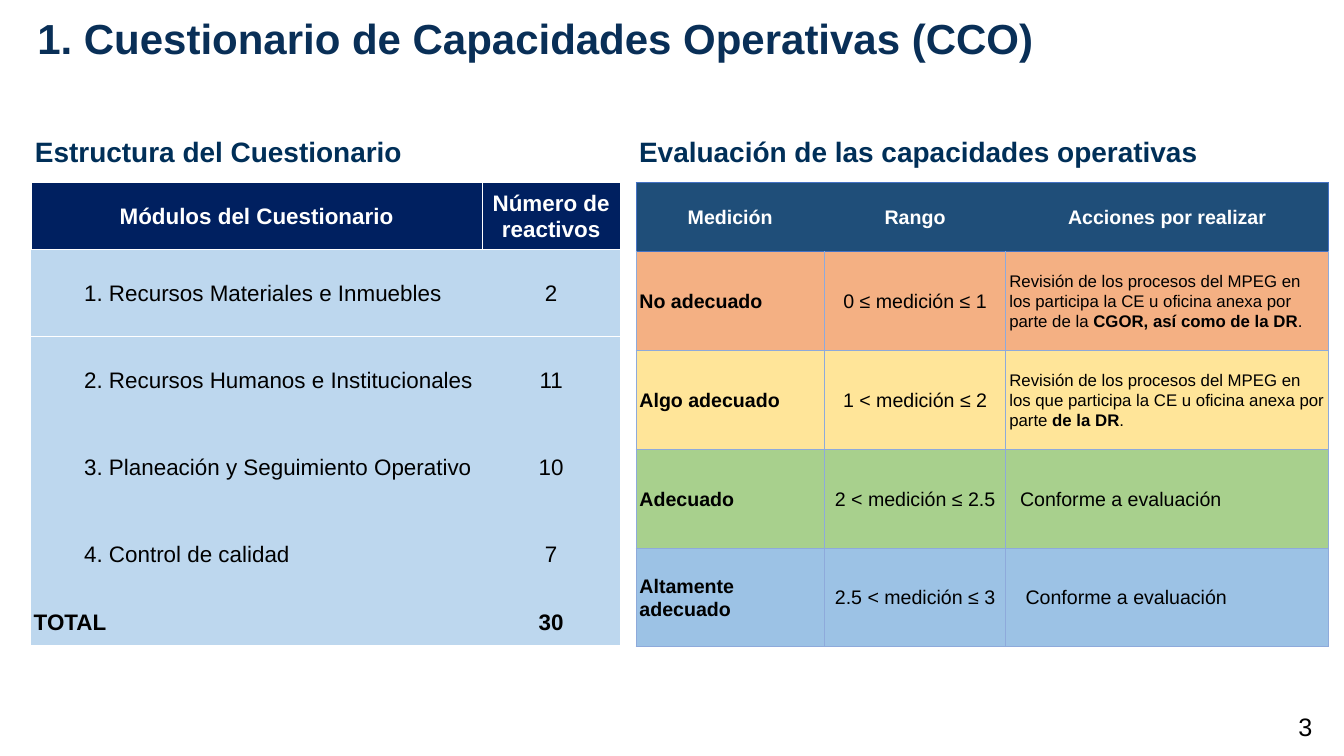
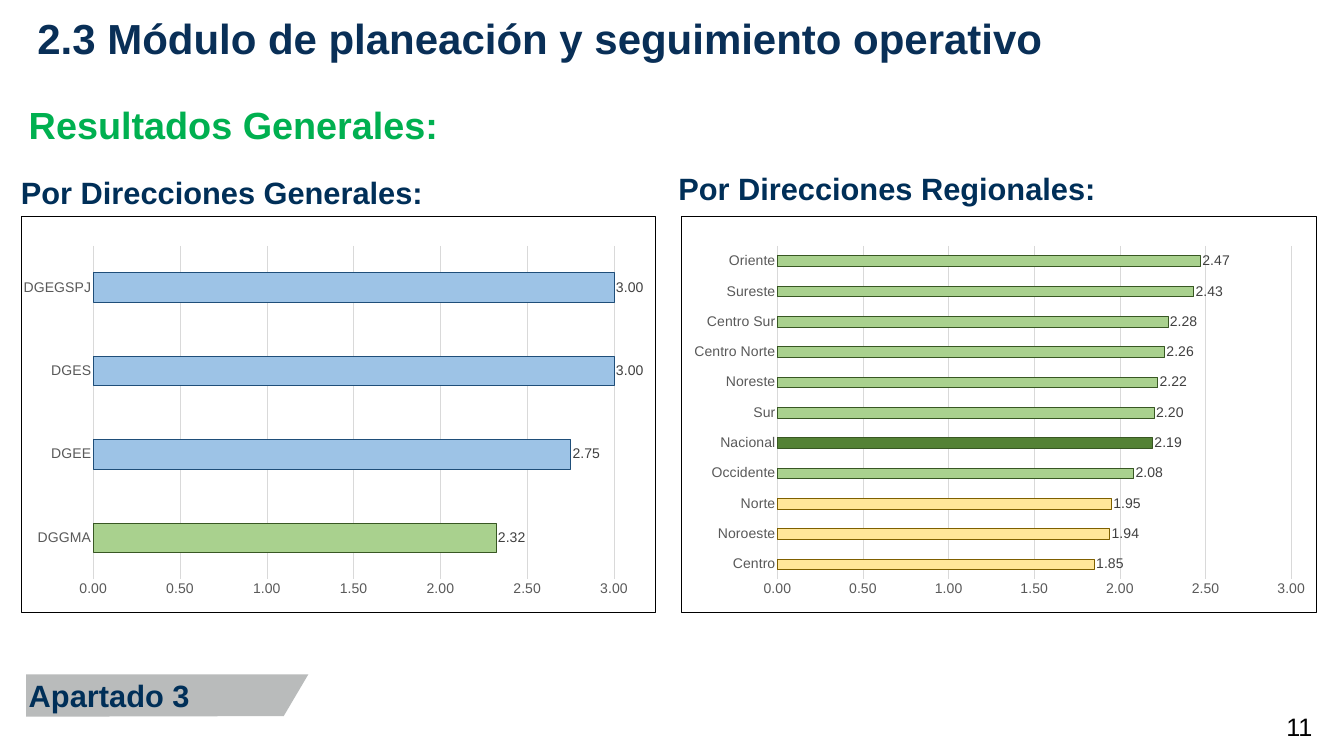
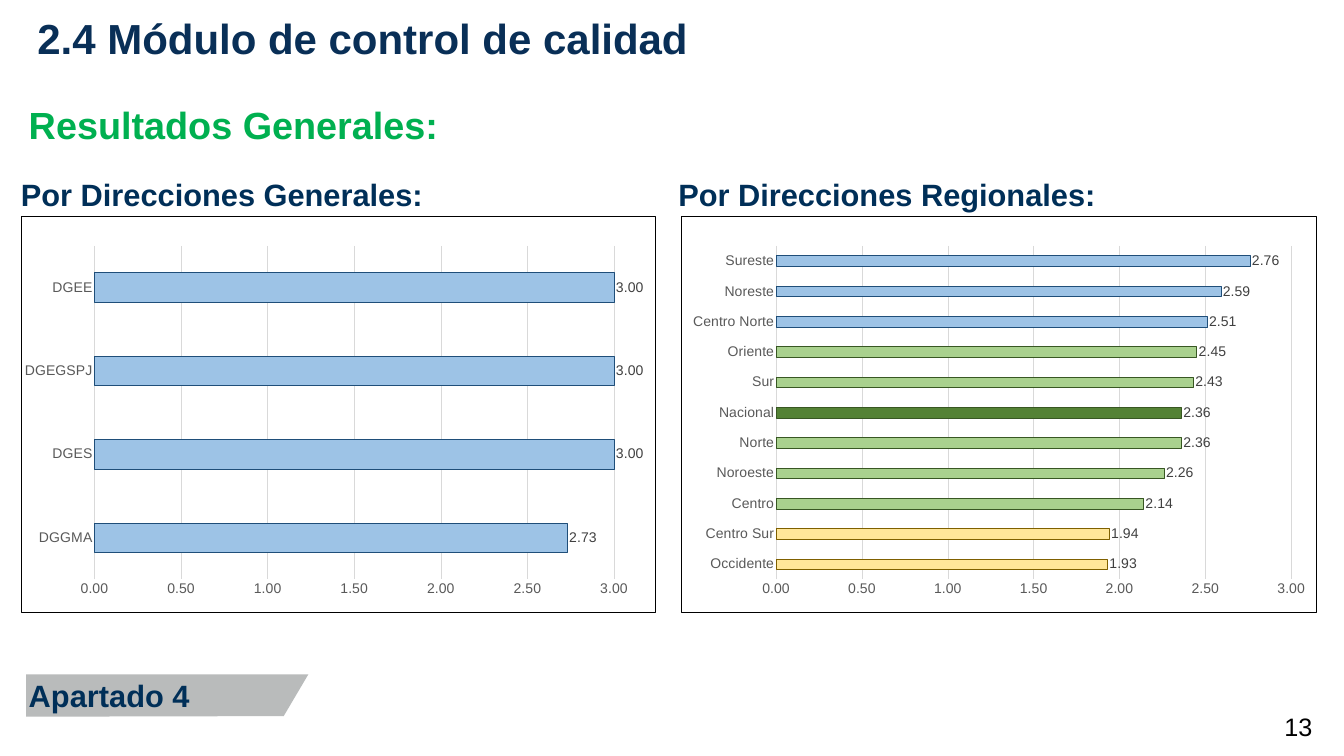
from dataclasses import dataclass

from pptx import Presentation
from pptx.chart.data import CategoryChartData
from pptx.dml.color import RGBColor
from pptx.enum.chart import XL_CHART_TYPE as ChartType, XL_LABEL_POSITION as LabelPos, XL_TICK_MARK as Tick
from pptx.enum.text import MSO_ANCHOR as Anchor, PP_ALIGN as Align
from pptx.oxml import parse_xml
from pptx.oxml.ns import nsdecls, qn
from pptx.util import Cm, Pt


@dataclass(frozen=True)
class Theme:
    font: str = "Arial"
    title: str = "092F57"
    heading: str = "002F58"
    accent: str = "00B050"
    black: str = "000000"
    white: str = "FFFFFF"
    tag: str = "B9BBBB"
    modules_head: str = "002060"
    modules_body: str = "BDD7EE"
    ranges_head: str = "1F4E79"
    ranges_edge: str = "4472C4"
    ranges_grid: str = "8EAADB"
    ranges_rows: tuple = ("F4B083", "FFE599", "A8D08D", "9CC2E5")
    axis_text: str = "595959"
    label_text: str = "404040"
    grid: str = "D9D9D9"
    low: tuple = ("FFE699", "7F6000")
    good: tuple = ("A9D18E", "385723")
    high: tuple = ("9DC3E6", "1F4E79")
    national: tuple = ("548235", "385723")
    title_size: int = 60
    subtitle_size: int = 54
    chart_heading_size: int = 44
    table_heading_size: int = 40
    number_size: int = 36
    modules_size: int = 32
    ranges_size: int = 28
    action_size: int = 24
    chart_size: int = 20


T = Theme()
INSET = 0.13

MODULES = [
    ("1. Recursos Materiales e Inmuebles", "2"),
    ("2. Recursos Humanos e Institucionales", "11"),
    ("3. Planeación y Seguimiento Operativo", "10"),
    ("4. Control de calidad", "7"),
    ("TOTAL", "30"),
]
RANGES = [
    ("No adecuado", "0 ≤ medición ≤ 1",
     [("Revisión de los procesos del MPEG en los participa la CE u oficina anexa por parte de la ", False),
      ("CGOR, así como de la DR", True), (".", False)], T.action_size, 0),
    ("Algo adecuado", "1 < medición ≤ 2",
     [("Revisión de los procesos del MPEG en los que participa la CE u oficina anexa por parte ", False),
      ("de la DR", True), (".", False)], T.action_size, 0),
    ("Adecuado", "2 < medición ≤ 2.5", [("Conforme a evaluación", False)], T.ranges_size, 0.54),
    ("Altamente adecuado", "2.5 < medición ≤ 3", [("Conforme a evaluación", False)], T.ranges_size, 0.82),
]
RESULTS = [
    dict(
        title="2.3 Módulo de planeación y seguimiento operativo", tag="Apartado 3", number="11",
        general=dict(DGGMA=2.32, DGEE=2.75, DGES=3, DGEGSPJ=3),
        regional={"Centro": 1.85, "Noroeste": 1.94, "Norte": 1.95, "Occidente": 2.08, "Nacional": 2.19,
                  "Sur": 2.2, "Noreste": 2.22, "Centro Norte": 2.26, "Centro Sur": 2.28,
                  "Sureste": 2.43, "Oriente": 2.47},
        heading_tops=(8.64, 8.43), plots=((0.114, 0.821), (0.151, 0.81)),
    ),
    dict(
        title="2.4 Módulo de control de calidad", tag="Apartado 4", number="13",
        general=dict(DGGMA=2.73, DGES=3, DGEGSPJ=3, DGEE=3),
        regional={"Occidente": 1.93, "Centro Sur": 1.94, "Centro": 2.14, "Noroeste": 2.26, "Norte": 2.36,
                  "Nacional": 2.36, "Sur": 2.43, "Oriente": 2.45, "Centro Norte": 2.51,
                  "Noreste": 2.59, "Sureste": 2.76},
        heading_tops=(8.71, 8.71), plots=((0.116, 0.819), (0.149, 0.812)),
    ),
]


def rgb(color):
    return RGBColor.from_string(color)


def assign(target, **values):
    for name, value in values.items():
        setattr(target, name, value)


def style_font(font, size, color, bold=False):
    assign(font, name=T.font, size=Pt(size), bold=bold)
    font.color.rgb = rgb(color)


def write(tf, runs, size, color, align=Align.LEFT, **paragraph):
    p = tf.paragraphs[0]
    assign(p, alignment=align, **paragraph)
    for text, bold in runs:
        r = p.add_run()
        r.text = text
        style_font(r.font, size, color, bold)
    return p


def set_insets(target, x, y):
    assign(target, margin_left=Cm(x), margin_right=Cm(x), margin_top=Cm(y), margin_bottom=Cm(y))


def add_text(slide, box, text, size, color, align=Align.LEFT, bold=True, anchor=Anchor.TOP):
    tf = slide.shapes.add_textbox(*map(Cm, box)).text_frame
    assign(tf, word_wrap=True, vertical_anchor=anchor)
    set_insets(tf, INSET, INSET)
    write(tf, [(text, bold)], size, color, align)


def add_slide(prs, title, number):
    slide = prs.slides.add_slide(prs.slide_layouts[5])
    sp = slide.shapes.title
    assign(sp, left=Cm(1.63), top=Cm(0.79), width=Cm(64.08), height=Cm(2.62))
    assign(sp.text_frame, word_wrap=True, vertical_anchor=Anchor.TOP)
    set_insets(sp.text_frame, 0.25, INSET)
    write(sp.text_frame, [(title, True)], T.title_size, T.title, line_spacing=0.9)
    add_text(slide, (62.03, 35.59, 4.25, 2.06), number, T.number_size, T.black,
             Align.RIGHT, False, Anchor.MIDDLE)
    return slide


def add_plain_table(slide, left, top, widths, heights):
    frame = slide.shapes.add_table(len(heights), len(widths), Cm(left), Cm(top),
                                   Cm(sum(widths)), Cm(sum(heights)))
    table = frame.table
    assign(table, first_row=False, horz_banding=False)
    table._tbl.tblPr[0].text = "{2D5ABB26-0587-4C30-8999-92F81FD0307C}"
    for column, width in zip(table.columns, widths):
        column.width = Cm(width)
    for row, height in zip(table.rows, heights):
        row.height = Cm(height)
    return table


def fill_cell(cell, runs, size, color, fill, align, inset, borders, indent=0, **paragraph):
    cell.vertical_anchor = Anchor.MIDDLE
    set_insets(cell, inset, 0)
    p = write(cell.text_frame, runs, size, color, align, line_spacing=1.07, **paragraph)
    if indent:
        p._p.get_or_add_pPr().set("marL", str(Cm(indent)))
    for side in "LRTB":
        if side in borders:
            cell._tc.get_or_add_tcPr().append(parse_xml(
                f'<a:ln{side} {nsdecls("a")} w="12700"><a:solidFill>'
                f'<a:srgbClr val="{borders[side]}"/></a:solidFill></a:ln{side}>'))
    cell.fill.solid()
    cell.fill.fore_color.rgb = rgb(fill)


def add_modules_table(slide):
    table = add_plain_table(slide, 1.57, 9.19, (22.73, 6.96), [3.38] + [4.39] * 4 + [2.39])
    for i, text in enumerate(("Módulos del Cuestionario", "Número de reactivos")):
        fill_cell(table.cell(0, i), [(text, True)], T.modules_size, T.white, T.modules_head,
                  Align.CENTER, INSET, dict.fromkeys("LRTB" if i == 0 else "LTB", T.white))
    for i, row in enumerate(MODULES, 1):
        total = i == len(MODULES)
        borders = {"T": T.white} if i == 1 else {}
        for j, text in enumerate(row):
            fill_cell(table.cell(i, j), [(text, total)], T.modules_size, T.black, T.modules_body,
                      Align.CENTER if j else Align.LEFT, INSET, borders,
                      indent=0 if j or total else 2.54)


def add_ranges_table(slide):
    table = add_plain_table(slide, 32.05, 9.19, (9.5, 9.14, 16.26), [3.48] + [4.98] * 4)
    heads = zip(("Medición", "Rango", "Acciones por realizar"), ("LTB", "TB", "RTB"))
    for i, (text, sides) in enumerate(heads):
        fill_cell(table.cell(0, i), [(text, True)], T.ranges_size, T.white, T.ranges_head,
                  Align.CENTER, 0.18, dict.fromkeys(sides, T.ranges_edge), space_after=Pt(8))
    for i, (level, limits, action, action_size, indent) in enumerate(RANGES, 1):
        borders = dict.fromkeys("LRTB", T.ranges_grid)
        if i == 1:
            borders["T"] = T.ranges_edge
        cells = [
            ([(level, True)], T.ranges_size, Align.LEFT, 0),
            ([(limits, False)], T.ranges_size, Align.CENTER, 0),
            (action, action_size, Align.LEFT, indent),
        ]
        for j, (runs, size, align, margin) in enumerate(cells):
            fill_cell(table.cell(i, j), runs, size, T.black, T.ranges_rows[i - 1], align,
                      0.18, borders, margin, space_after=Pt(8))


def rating_colors(name, value):
    if name == "Nacional":
        return T.national
    if value > 2.5:
        return T.high
    return T.good if value > 2 else T.low


def paint(fmt, fill, line):
    fmt.fill.solid()
    fmt.fill.fore_color.rgb = rgb(fill)
    fmt.line.color.rgb = rgb(line)
    fmt.line.width = Pt(0.75)


def frame_chart(chart, x, width):
    space = chart._chartSpace.find(qn("c:chart"))
    space.addnext(parse_xml(
        f'<c:spPr {nsdecls("c", "a")}><a:solidFill><a:srgbClr val="{T.white}"/></a:solidFill>'
        f'<a:ln w="9525"><a:solidFill><a:srgbClr val="{T.black}"/></a:solidFill></a:ln></c:spPr>'))
    area = space.find(qn("c:plotArea"))
    for layout in area.findall(qn("c:layout")):
        area.remove(layout)
    places = "".join(f'<c:{tag} val="{value}"/>' for tag, value in
                     (("x", x), ("y", 0.074), ("w", width), ("h", 0.842)))
    area.insert(0, parse_xml(
        f'<c:layout {nsdecls("c")}><c:manualLayout><c:layoutTarget val="inner"/>'
        f'<c:xMode val="edge"/><c:yMode val="edge"/>{places}</c:manualLayout></c:layout>'))


def add_scores_chart(slide, left, scores, base, plot):
    data = CategoryChartData(number_format="0.00")
    data.categories = list(scores)
    data.add_series("Series 1", list(scores.values()))
    chart = slide.shapes.add_chart(ChartType.BAR_CLUSTERED, Cm(left), Cm(10.9),
                                   Cm(32), Cm(19.99), data).chart
    assign(chart, has_title=False, has_legend=False)
    style_font(chart.font, T.chart_size, T.black)
    frame_chart(chart, *plot)

    for axis in (chart.category_axis, chart.value_axis):
        assign(axis, major_tick_mark=Tick.NONE, minor_tick_mark=Tick.NONE)
        style_font(axis.tick_labels.font, T.chart_size, T.axis_text)
    values = chart.value_axis
    assign(values, minimum_scale=0, maximum_scale=3, major_unit=0.5, has_major_gridlines=True)
    assign(values.tick_labels, number_format="0.00", number_format_is_linked=False)
    values.format.line.fill.background()
    chart.category_axis.has_major_gridlines = False
    for line in (values.major_gridlines.format.line, chart.category_axis.format.line):
        line.color.rgb = rgb(T.grid)
        line.width = Pt(0.75)

    bars = chart.plots[0]
    assign(bars, gap_width=182, vary_by_categories=False, has_data_labels=True)
    labels = bars.data_labels
    assign(labels, show_value=True, number_format="0.00", number_format_is_linked=False,
           position=LabelPos.OUTSIDE_END)
    style_font(labels.font, T.chart_size, T.label_text)
    series = bars.series[0]
    paint(series.format, *base)
    for i, (name, value) in enumerate(scores.items()):
        paint(series.points[i].format, *rating_colors(name, value))


def add_section_tag(slide, text):
    corners = [(15.54, 33.99), (14.3, 36.09), (1.32, 36.12)]
    builder = slide.shapes.build_freeform(Cm(1.32), Cm(33.99))
    builder.add_line_segments([(Cm(x), Cm(y)) for x, y in corners], close=True)
    sp = builder.convert_to_shape()
    sp.shadow.inherit = False
    sp.fill.solid()
    sp.fill.fore_color.rgb = rgb(T.tag)
    sp.line.fill.background()
    assign(sp.text_frame, word_wrap=True, vertical_anchor=Anchor.MIDDLE)
    set_insets(sp.text_frame, INSET, INSET)
    write(sp.text_frame, [(text, True)], T.chart_heading_size, T.heading)


def add_questionnaire_slide(prs):
    slide = add_slide(prs, "1. Cuestionario de Capacidades Operativas (CCO)", "3")
    add_modules_table(slide)
    add_ranges_table(slide)
    for left, width, text in ((1.63, 21.84, "Estructura del Cuestionario"),
                              (32.08, 34.32, "Evaluación de las capacidades operativas")):
        add_text(slide, (left, 6.65, width, 2.9), text, T.table_heading_size, T.heading)


def add_results_slide(prs, result):
    slide = add_slide(prs, result["title"], result["number"])
    add_text(slide, (1.32, 4.98, 21.84, 2.9), "Resultados Generales:", T.subtitle_size, T.accent)
    columns = zip(
        ("Por Direcciones Generales:", "Por Direcciones Regionales:"),
        (0.28, 33.8), result["heading_tops"], (1.04, 34.34),
        (result["general"], result["regional"]), (T.high, T.good), result["plots"])
    for heading, heading_left, heading_top, chart_left, scores, base, plot in columns:
        add_text(slide, (heading_left, heading_top, 21.84, 2.9), heading,
                 T.chart_heading_size, T.heading, Align.CENTER)
        add_scores_chart(slide, chart_left, scores, base, plot)
    add_section_tag(slide, result["tag"])


def main():
    prs = Presentation()
    assign(prs, slide_width=Cm(67.74), slide_height=Cm(38.1))
    add_questionnaire_slide(prs)
    for result in RESULTS:
        add_results_slide(prs, result)
    prs.save("out.pptx")


if __name__ == "__main__":
    main()
